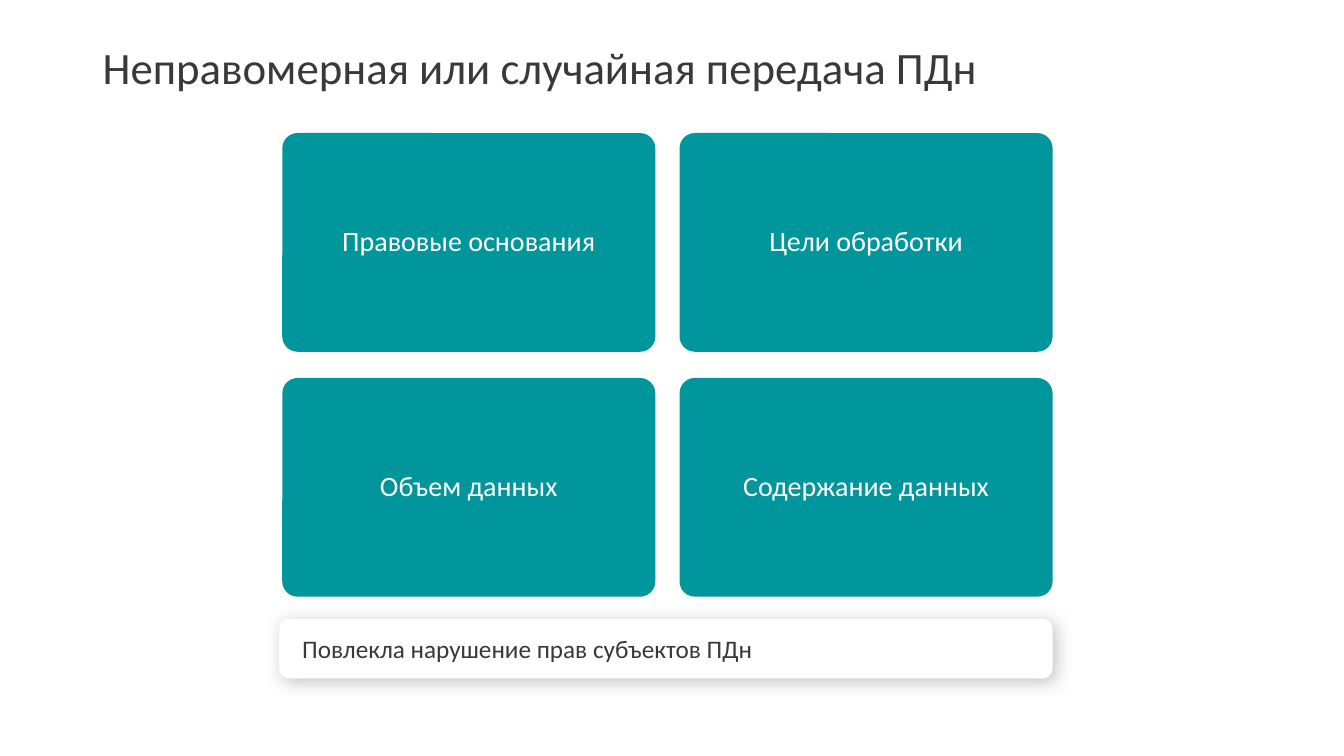
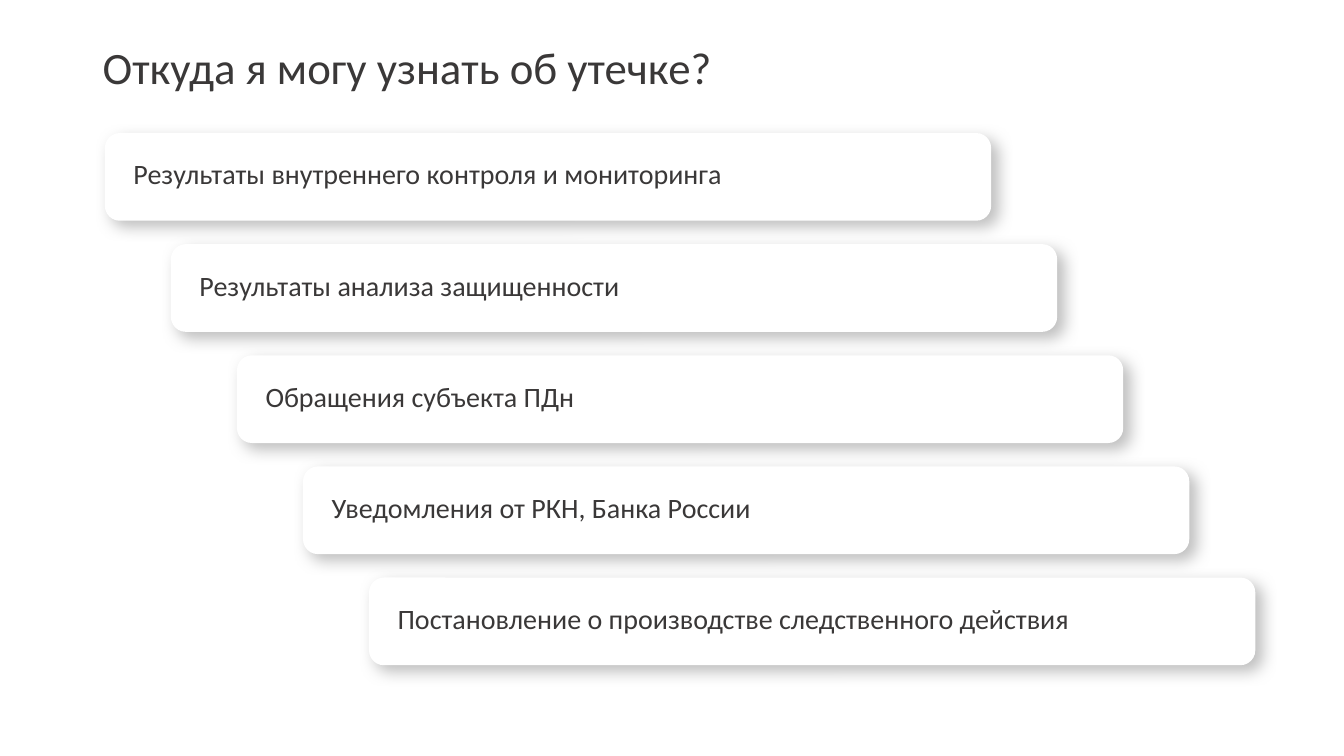
from lxml.etree import SubElement
from pptx import Presentation
from pptx.dml.color import RGBColor
from pptx.enum.shapes import MSO_SHAPE
from pptx.enum.text import MSO_ANCHOR, PP_ALIGN
from pptx.oxml.ns import qn
from pptx.util import Inches, Pt

COLORS = {
    "text": "3A3838",
    "white": "FFFFFF",
    "teal": "00969B",
    "note_shadow": "767171",
    "step_shadow": "BFBFBF",
}
FONT = "Calibri"
NOTE_SHADOW = {"color": "note_shadow", "alpha": 40, "blur": 12, "distance": 3}
STEP_SHADOW = {"color": "step_shadow", "alpha": 100, "blur": 11, "distance": 6}


def write_text(shape, text, size=20, color="text", align=PP_ALIGN.LEFT,
               spacing=1.0, insets=(0.1, 0.05, 0.1, 0.05)):
    """Fill a shape with one vertically centred paragraph."""
    frame = shape.text_frame
    frame.word_wrap = True
    frame.vertical_anchor = MSO_ANCHOR.MIDDLE
    (frame.margin_left, frame.margin_top,
     frame.margin_right, frame.margin_bottom) = map(Inches, insets)
    paragraph = frame.paragraphs[0]
    paragraph.alignment = align
    paragraph.line_spacing = spacing
    run = paragraph.add_run()
    run.text = text
    run.font.name = FONT
    run.font.size = Pt(size)
    run.font.color.rgb = RGBColor.from_string(COLORS[color])


def add_shadow(shape, color, alpha, blur, distance):
    """Give a shape an outer shadow falling to the lower right."""
    effects = shape._element.spPr.find(qn("a:effectLst"))
    shadow = SubElement(effects, qn("a:outerShdw"), blurRad=str(Pt(blur)),
                        dist=str(Pt(distance)), dir=str(45 * 60000),
                        algn="tl", rotWithShape="0")
    shade = SubElement(shadow, qn("a:srgbClr"), val=COLORS[color])
    SubElement(shade, qn("a:alpha"), val=str(alpha * 1000))


def add_panel(slide, box, text, fill="white", radius=0.17, shadow=None, **text_format):
    """Add a rounded panel with text and an optional shadow."""
    panel = slide.shapes.add_shape(MSO_SHAPE.ROUNDED_RECTANGLE, *map(Inches, box))
    panel.adjustments[0] = radius
    panel.shadow.inherit = False
    panel.fill.solid()
    panel.fill.fore_color.rgb = RGBColor.from_string(COLORS[fill])
    panel.line.fill.background()
    if shadow:
        add_shadow(panel, **shadow)
    write_text(panel, text, **text_format)


def add_titled_slide(presentation, title):
    """Add a blank slide with the shared title."""
    slide = presentation.slides.add_slide(presentation.slide_layouts[6])
    box = map(Inches, (0.92, 0.4, 11.5, 0.59))
    write_text(slide.shapes.add_textbox(*box), title, size=32, spacing=0.9)
    return slide


def add_card_grid(slide, box, labels, columns=2, gap_x=0.24, gap_y=0.26):
    """Lay teal cards out in an even grid inside the box."""
    left, top, width, height = box
    rows = len(labels) // columns
    card_width = (width - gap_x * (columns - 1)) / columns
    card_height = (height - gap_y * (rows - 1)) / rows
    for index, label in enumerate(labels):
        row, column = divmod(index, columns)
        card = (left + column * (card_width + gap_x),
                top + row * (card_height + gap_y), card_width, card_height)
        add_panel(slide, card, label, fill="teal", radius=0.07, color="white",
                  align=PP_ALIGN.CENTER, spacing=0.9, insets=(0.17,) * 4)


def add_staircase(slide, box, labels, step_width=8.79, step_height=0.87):
    """Lay panels out from the top left to the bottom right of the box."""
    left, top, width, height = box
    shift_x = (width - step_width) / (len(labels) - 1)
    shift_y = (height - step_height) / (len(labels) - 1)
    for index, label in enumerate(labels):
        step = (left + index * shift_x, top + index * shift_y, step_width, step_height)
        add_panel(slide, step, label, shadow=STEP_SHADOW, spacing=0.8,
                  insets=(0.24, 0.12, 0.12, 0.12))


def build_transfer_slide(presentation):
    """Build the slide on unlawful or accidental transfer."""
    slide = add_titled_slide(presentation, "Неправомерная или случайная передача ПДн")
    add_panel(slide, (2.77, 6.14, 7.67, 0.59), "Повлекла нарушение прав субъектов ПДн",
              radius=0.16, shadow=NOTE_SHADOW, size=18, insets=(0.2, 0.08, 0.08, 0.08))
    add_card_grid(slide, (2.8, 1.32, 7.64, 4.6), [
        "Правовые основания",
        "Цели обработки",
        "Объем данных",
        "Содержание данных",
    ])


def build_sources_slide(presentation):
    """Build the slide on how a leak becomes known."""
    slide = add_titled_slide(presentation, "Откуда я могу узнать об утечке?")
    add_staircase(slide, (1.04, 1.32, 11.41, 5.28), [
        "Результаты внутреннего контроля и мониторинга",
        "Результаты анализа защищенности",
        "Обращения субъекта ПДн",
        "Уведомления от РКН, Банка России",
        "Постановление о производстве следственного действия",
    ])


def main():
    """Build and save the presentation."""
    presentation = Presentation()
    presentation.slide_width = Inches(13.33)
    presentation.slide_height = Inches(7.5)
    build_transfer_slide(presentation)
    build_sources_slide(presentation)
    presentation.save("out.pptx")


if __name__ == "__main__":
    main()
